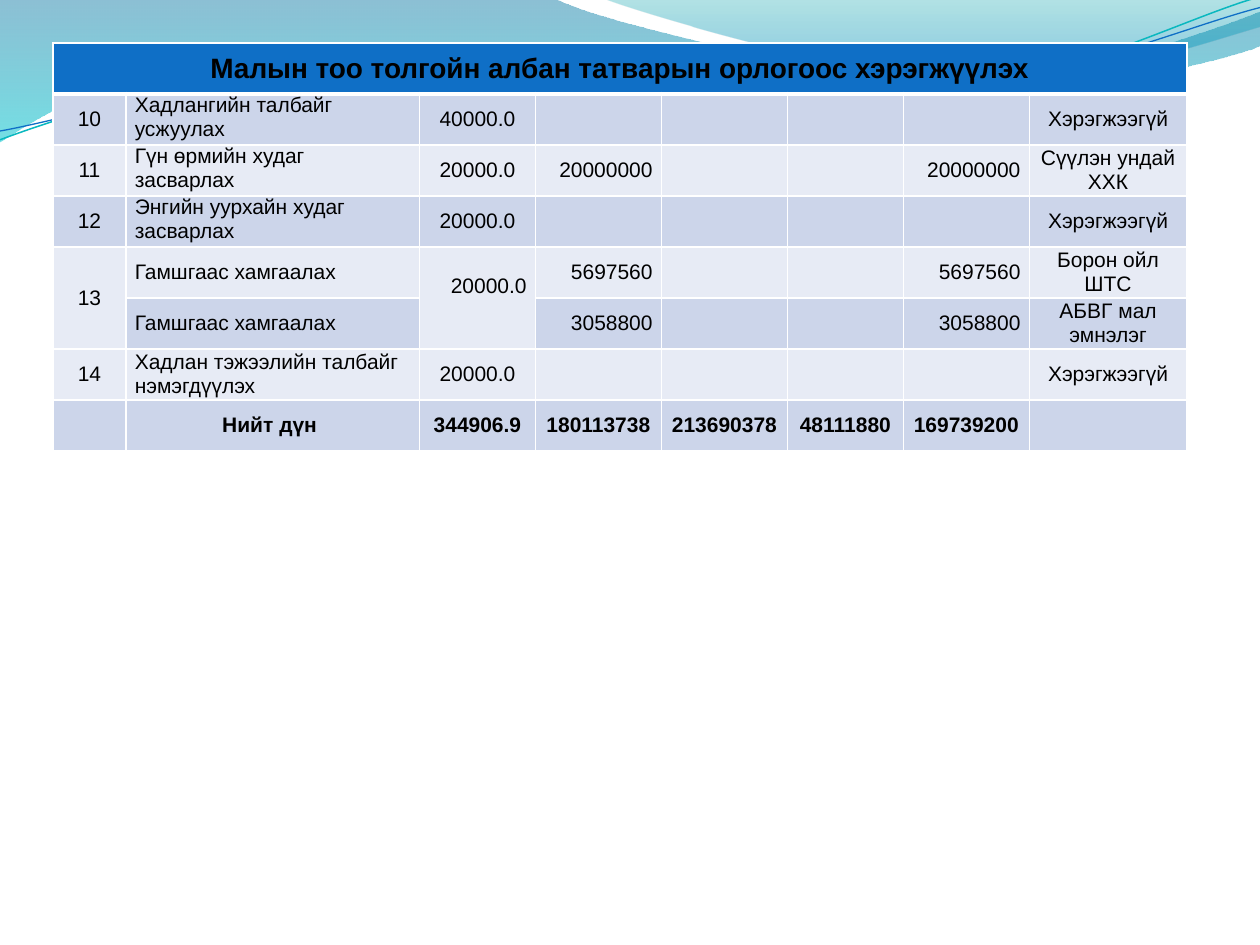
from dataclasses import dataclass

from lxml.etree import Element, SubElement
from pptx import Presentation
from pptx.dml.color import RGBColor
from pptx.enum.text import MSO_ANCHOR, PP_ALIGN
from pptx.oxml.ns import qn
from pptx.slide import Slide
from pptx.util import Inches, Pt

LEFT, CENTER, RIGHT = PP_ALIGN.LEFT, PP_ALIGN.CENTER, PP_ALIGN.RIGHT

HEADING = "Малын тоо толгойн албан татварын орлогоос хэрэгжүүлэх"
NOT_DONE = "Хэрэгжээгүй"
BUDGET = [
    ["10", "Хадлангийн талбайг усжуулах", "40000.0", "", "", "", "", NOT_DONE],
    ["11", "Гүн өрмийн худаг засварлах", "20000.0", "20000000", "", "", "20000000", "Сүүлэн ундай ХХК"],
    ["12", "Энгийн уурхайн худаг засварлах", "20000.0", "", "", "", "", NOT_DONE],
    ["13", "Гамшгаас хамгаалах", "20000.0", "5697560", "", "", "5697560", "Борон ойл ШТС"],
    ["", "Гамшгаас хамгаалах", "", "3058800", "", "", "3058800", "АБВГ мал эмнэлэг"],
    ["14", "Хадлан тэжээлийн талбайг нэмэгдүүлэх", "20000.0", "", "", "", "", NOT_DONE],
    ["", "Нийт дүн", "344906.9", "180113738", "213690378", "48111880", "169739200", ""],
]
COLUMN_WIDTHS = [0.58, 2.33, 0.92, 1, 1, 0.92, 1, 1.25]
COLUMN_ALIGNS = [CENTER, LEFT, CENTER, RIGHT, RIGHT, RIGHT, RIGHT, CENTER]
TABLE_HEIGHT = 3.24
TOTAL_ROW = len(BUDGET)
SHARED_ROW = 4
TOP_ANCHORED_ROWS = (1, 2, 3)

LEFT_WAVE = [
    (0, 0), (4.4, -0.01),
    ((4.76, 0.17), (6.64, 0.63), (7.58, 0.63)),
    ((8.53, 0.63), (9.58, 0.26), (10, 0.09)),
    (10.01, 0.36),
    ((9.83, 0.44), (8.7, 0.76), (7.46, 0.75)),
    ((6.22, 0.75), (3.82, 0.28), (2.57, 0.34)),
    ((1.29, 0.36), (0.46, 0.83), (-0.01, 1.13)),
    (0, 0),
]
RIGHT_WAVE = [
    (4.79, -0.01),
    ((5.09, 0.11), (6.82, 0.62), (7.69, 0.65)),
    ((8.56, 0.69), (9.61, 0.32), (10, 0.21)),
    (10, 0),
    (4.79, -0.01),
]
TEAL_STRAND = [
    (0, 1.11),
    ((0.48, 0.93), (1.58, 0.57), (2.77, 0.52)),
    ((3.95, 0.47), (5.93, 0.89), (7.13, 0.8)),
    ((8.33, 0.71), (9.38, 0.15), (9.98, -0.02)),
]
BLUE_STRAND = [
    (0, 1.04),
    ((0.47, 0.96), (1.64, 0.61), (2.83, 0.56)),
    ((4.03, 0.51), (5.97, 0.84), (7.17, 0.75)),
    ((8.36, 0.67), (9.41, 0.21), (10, 0.06)),
]


def color(value):
    return RGBColor.from_string(value)


def is_curve(piece):
    return isinstance(piece[0], tuple)


@dataclass
class BudgetSlide:
    """Draws the budget table and its wave decoration in one style."""

    slide: Slide
    font: str = "Arial"
    ink: str = "000000"
    rule: str = "FFFFFF"
    heading_fill: str = "0F6FC6"
    bands: tuple = ("E7EBF5", "CCD5EA")

    def outline(self, pieces, close):
        knots = [piece[-1] if is_curve(piece) else piece for piece in pieces]
        start, *rest = [(Inches(x), Inches(y)) for x, y in knots]
        builder = self.slide.shapes.build_freeform(*start, scale=1.0)
        builder.add_line_segments(rest, close=close)
        shape = builder.convert_to_shape()
        shape.shadow.inherit = False
        segments = list(shape._element.iter(qn("a:lnTo")))
        for segment, piece in zip(segments, pieces[1:]):
            if is_curve(piece):
                curve = Element(qn("a:cubicBezTo"))
                for x, y in piece:
                    SubElement(curve, qn("a:pt"), x=str(Inches(x) - shape.left), y=str(Inches(y) - shape.top))
                segment.getparent().replace(segment, curve)
        return shape

    def wave(self, pieces, stops):
        shape = self.outline(pieces, True)
        shape.line.fill.background()
        shape.fill.gradient()
        shape.fill.gradient_angle = 270
        for stop, (position, shade, _) in zip(shape.fill.gradient_stops, stops):
            stop.position = position
            stop.color.rgb = color(shade)
        shades = list(shape._element.spPr.iter(qn("a:srgbClr")))
        for shade, (_, _, opacity) in zip(shades, stops):
            SubElement(shade, qn("a:alpha"), val=str(opacity * 1000))

    def strand(self, pieces, shade, width):
        shape = self.outline(pieces, False)
        shape.fill.background()
        shape.line.color.rgb = color(shade)
        shape.line.width = Pt(width)

    def borders(self, cell, top, bottom):
        properties = cell._tc.get_or_add_tcPr()
        for side, width in zip("LRTB", (1, 1, top, bottom)):
            border = SubElement(properties, qn(f"a:ln{side}"), w=str(Pt(width)))
            fill = SubElement(border, qn("a:solidFill"))
            SubElement(fill, qn("a:srgbClr"), val=self.rule)

    def cell(self, cell, text, fill, align, size=12, bold=False, top=1, bottom=1):
        self.borders(cell, top, bottom)
        cell.fill.solid()
        cell.fill.fore_color.rgb = color(fill)
        cell.margin_left = cell.margin_right = Inches(0.07)
        cell.margin_top = cell.margin_bottom = 0
        cell.vertical_anchor = MSO_ANCHOR.MIDDLE
        if not text:
            return
        cell.text = text
        paragraph = cell.text_frame.paragraphs[0]
        paragraph.alignment = align
        font = paragraph.font
        font.name, font.size, font.bold = self.font, Pt(size), bold
        font.color.rgb = color(self.ink)

    def table(self, left, top):
        row_count = len(BUDGET) + 1
        table = self.slide.shapes.add_table(
            row_count, len(COLUMN_WIDTHS), Inches(left), Inches(top),
            Inches(sum(COLUMN_WIDTHS)), Inches(TABLE_HEIGHT),
        ).table
        table.first_row = table.horz_banding = False
        for column, width in zip(table.columns, COLUMN_WIDTHS):
            column.width = Inches(width)
        for row in table.rows:
            row.height = Inches(TABLE_HEIGHT / row_count)
        for c in range(len(COLUMN_WIDTHS)):
            self.cell(table.cell(0, c), "" if c else HEADING, self.heading_fill, CENTER, 16, True, bottom=3)
        for r, entries in enumerate(BUDGET, 1):
            is_total = r == TOTAL_ROW
            for c, (text, align) in enumerate(zip(entries, COLUMN_ALIGNS)):
                self.cell(table.cell(r, c), text, self.bands[r % 2], CENTER if is_total else align,
                          bold=is_total, top=3 if r == 1 else 1)
            table.cell(r, 1).margin_right = Inches(0.12)
        for r in TOP_ANCHORED_ROWS:
            table.cell(r, 1).vertical_anchor = MSO_ANCHOR.TOP
        table.cell(0, 0).merge(table.cell(0, len(COLUMN_WIDTHS) - 1))
        for c in (0, 2):
            table.cell(SHARED_ROW, c).merge(table.cell(SHARED_ROW + 1, c))
        shared_amount = table.cell(SHARED_ROW, 2)
        shared_amount.margin_bottom = Inches(0.19)
        shared_amount.text_frame.paragraphs[0].alignment = RIGHT


def main():
    deck = Presentation()
    deck.slide_width, deck.slide_height = Inches(10), Inches(7.5)
    page = BudgetSlide(deck.slides.add_slide(deck.slide_layouts[6]))
    page.wave(LEFT_WAVE, [(0, "0074A1", 45), (1, "00C6CF", 55)])
    page.wave(RIGHT_WAVE, [(0, "00A1A9", 30), (0.8, "008BBF", 45)])
    page.strand(TEAL_STRAND, "0AB8BF", 0.85)
    page.strand(BLUE_STRAND, "0F6FC6", 0.75)
    page.table(0.42, 0.34)
    deck.save("out.pptx")


if __name__ == "__main__":
    main()
